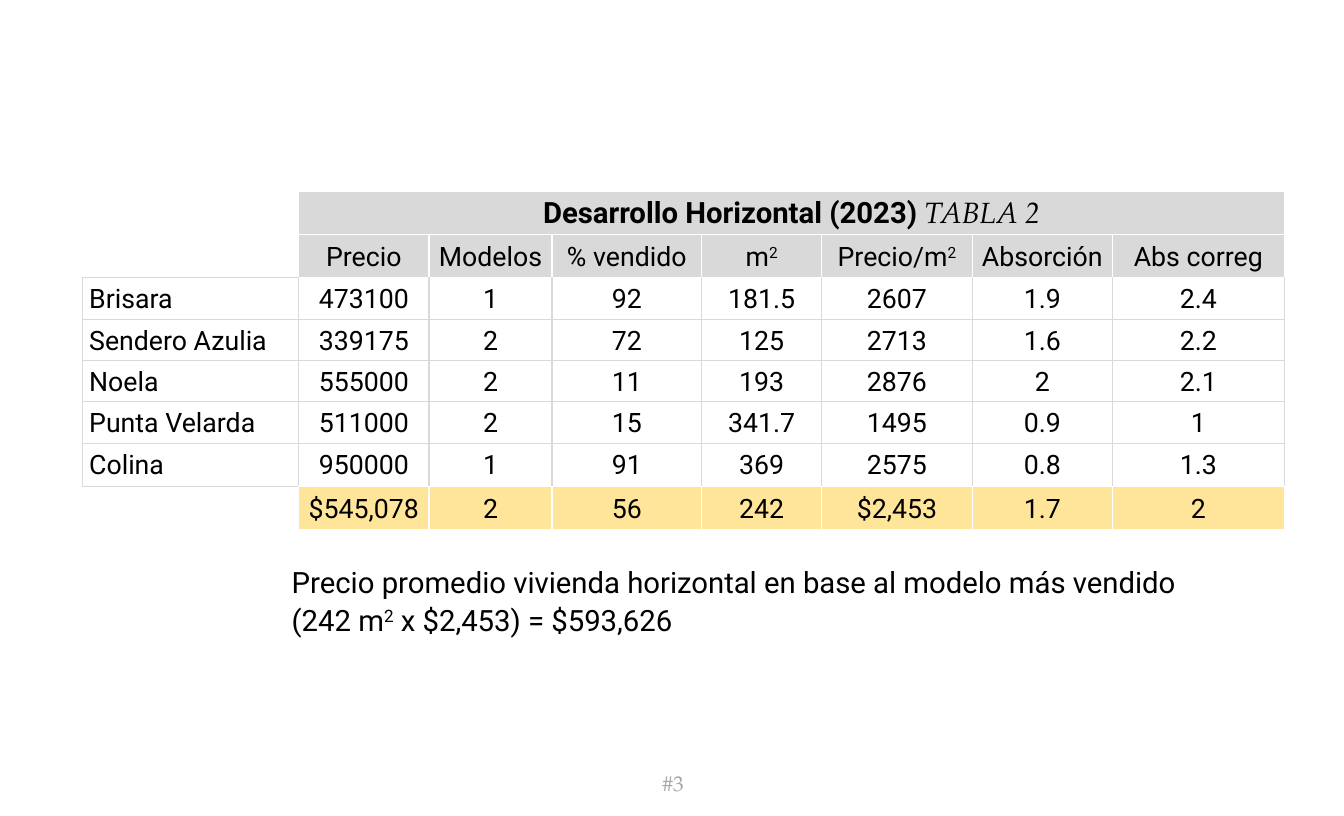
import pptx
import pptx.dml.color
import pptx.enum.text
import pptx.oxml
import pptx.oxml.ns
import pptx.util

Pt = pptx.util.Pt
ALIGN = pptx.enum.text.PP_ALIGN
MIDDLE = pptx.enum.text.MSO_ANCHOR.MIDDLE
SANS, SERIF = "Roboto", "TeX Gyre Pagella"
GREY, WHITE, YELLOW = "D9D9D9", "FFFFFF", "FFE599"
NO_GRID = "{2D5ABB26-0587-4C30-8999-92F81FD0307C}"


def rgb(value):
    return pptx.dml.color.RGBColor.from_string(value)


def add_text(p, text, size, font=SANS, color="000000"):
    """Add runs to a paragraph, with ² set as a raised 2."""
    before, square, after = text.partition("²")
    for part, raised in ((before, False), ("2" if square else "", True), (after, False)):
        if part:
            r = p.add_run()
            r.text = part
            r.font.size = Pt(size)
            r.font.name = font
            r.font.color.rgb = rgb(color)
            if raised:
                r._r.get_or_add_rPr().set("baseline", "30000")


prs = pptx.Presentation()
prs.slide_width, prs.slide_height = Pt(1008), Pt(612)
s = prs.slides.add_slide(prs.slide_layouts[6])

# Slide number
sp = s.shapes.add_textbox(Pt(468.7), Pt(578.9), Pt(70.6), Pt(18.7))
tf = sp.text_frame
tf.word_wrap = True
tf.vertical_anchor = MIDDLE
tf.margin_left, tf.margin_top, tf.margin_right, tf.margin_bottom = Pt(8.6), Pt(1.4), Pt(7.2), Pt(3.6)
tf.paragraphs[0].alignment = ALIGN.CENTER
add_text(tf.paragraphs[0], "#3", 16, SERIF, "A6A6A6")

# Price table
rows = [
    ["", "Desarrollo Horizontal (2023) ", "", "", "", "", "", ""],
    ["", "Precio", "Modelos", "% vendido", "m²", "Precio/m²", "Absorción", "Abs correg"],
    ["Brisara", "473100", "1", "92", "181.5", "2607", "1.9", "2.4"],
    ["Sendero Azulia", "339175", "2", "72", "125", "2713", "1.6", "2.2"],
    ["Noela", "555000", "2", "11", "193", "2876", "2", "2.1"],
    ["Punta Velarda", "511000", "2", "15", "341.7", "1495", "0.9", "1"],
    ["Colina", "950000", "1", "91", "369", "2575", "0.8", "1.3"],
    ["", "$545,078", "2", "56", "242", "$2,453", "1.7", "2"],
]
widths = [162, 97.9, 92.2, 112.3, 90, 113, 105.1, 128.9]
heights = [32.4, 32.4, 31, 31, 31, 31, 32.4, 32.4]
total_row = len(rows) - 1
last_body = total_row - 1

frame = s.shapes.add_table(len(rows), len(widths), Pt(61.9), Pt(143.6), Pt(sum(widths)), Pt(sum(heights)))
table = frame.table
table.first_row = table.horz_banding = False
table._tbl.tblPr.find(pptx.oxml.ns.qn("a:tableStyleId")).text = NO_GRID
for column, width in zip(table.columns, widths):
    column.width = Pt(width)
for row, height in zip(table.rows, heights):
    row.height = Pt(height)
table.cell(0, 1).merge(table.cell(0, len(widths) - 1))

for i, values in enumerate(rows):
    for j, text in enumerate(values):
        cell = table.cell(i, j)
        cell.vertical_anchor = MIDDLE
        cell.margin_left = cell.margin_right = Pt(5)
        cell.margin_top = cell.margin_bottom = 0

        body = 2 <= i <= last_body
        if not body and j == 0:
            borders = {"R": WHITE}
            if i == 1:
                borders["B"] = GREY
            elif i == total_row:
                borders["T"] = GREY
        else:
            borders = dict.fromkeys("LRTB", GREY if body else WHITE)
            if j > 0 and i == 2:
                borders["T"] = WHITE
            if j > 0 and i == last_body:
                borders["B"] = WHITE
        tcPr = cell._tc.get_or_add_tcPr()
        for side in "LRTB":
            if side in borders:
                tcPr.append(pptx.oxml.parse_xml(
                    f'<a:ln{side} {pptx.oxml.ns.nsdecls("a")} w="12700"><a:solidFill>'
                    f'<a:srgbClr val="{borders[side]}"/></a:solidFill></a:ln{side}>'))

        if body or j == 0:
            cell.fill.background()
        else:
            cell.fill.solid()
            cell.fill.fore_color.rgb = rgb(YELLOW if i == total_row else GREY)

        if text:
            p = cell.text_frame.paragraphs[0]
            p.alignment = ALIGN.CENTER if j else ALIGN.LEFT
            p.line_spacing = 1.07
            p.space_after = Pt(8)
            add_text(p, text, 22 if i == 0 else 20)

p = table.cell(0, 1).text_frame.paragraphs[0]
p.runs[0].font.bold = True
add_text(p, "TABLA 2", 22, SERIF)
p.runs[1].font.italic = True

# Conclusion
sp = s.shapes.add_textbox(Pt(208.8), Pt(416.2), Pt(709.2), Pt(65.5))
tf = sp.text_frame
tf.word_wrap = True
tf.margin_left = tf.margin_right = Pt(10)
tf.margin_top = tf.margin_bottom = Pt(5)
p = tf.paragraphs[0]
p.line_spacing = 1.07
p.space_after = Pt(8)
add_text(p, "Precio promedio vivienda horizontal en base al modelo más vendido (242 m² x $2,453) = $593,626", 22)

prs.save("out.pptx")
